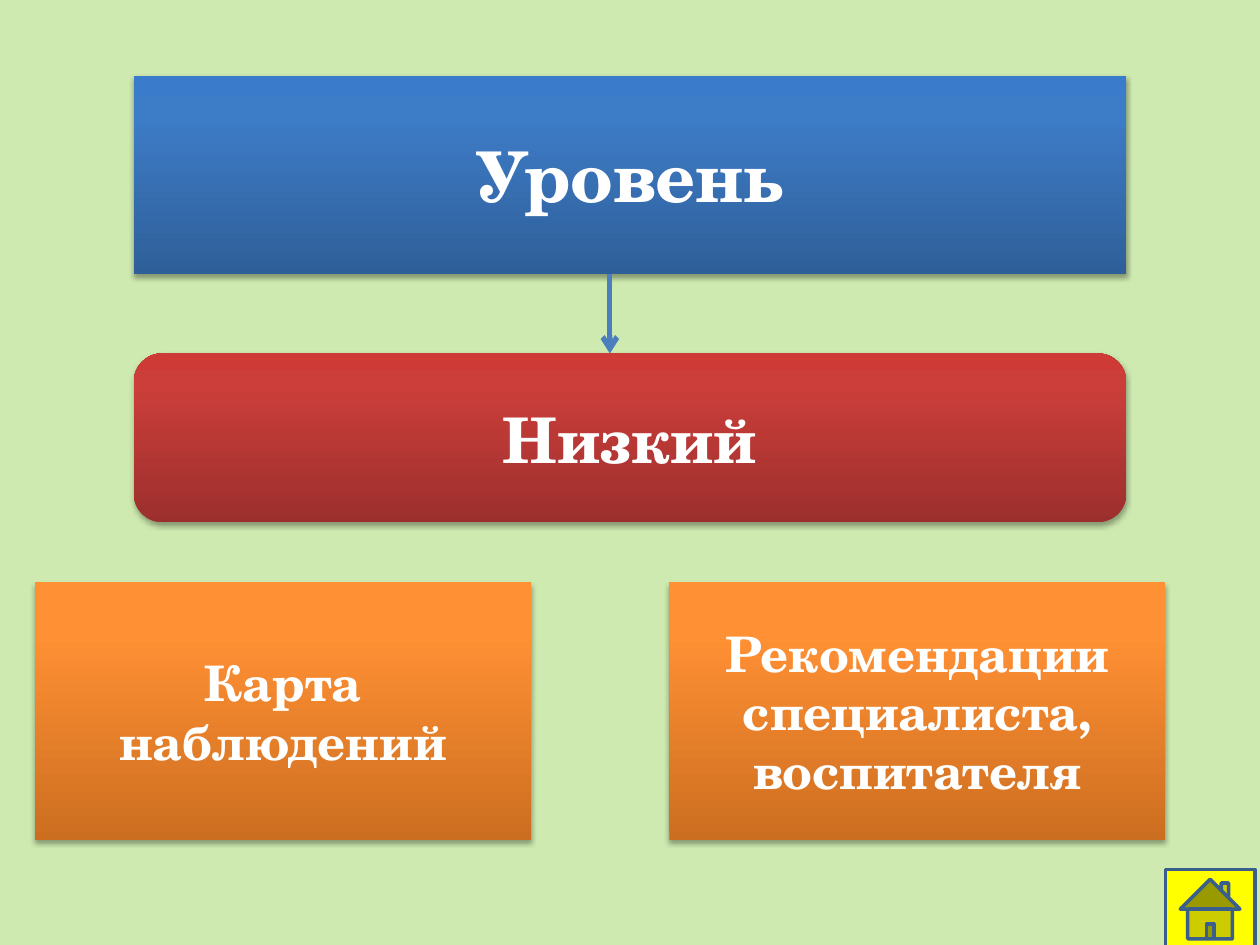
"""Build the level slide: a heading, its level and two follow-up cards."""
from lxml import etree
from pptx import Presentation
from pptx.dml.color import RGBColor
from pptx.enum import shapes, text
from pptx.oxml import ns
from pptx.util import Pt

FONT = "TeX Gyre Schola"
BLUE = ((0, "2F5F99"), (80, "3D7CC7"), (100, "3A7CCB"))
RED = ((0, "9C2F2D"), (80, "CB3E3A"), (100, "CE3B37"))
ORANGE = ((0, "CC6E20"), (80, "FF9034"), (100, "FF9136"))
RECT = shapes.MSO_SHAPE.RECTANGLE
ROUND = shapes.MSO_SHAPE.ROUNDED_RECTANGLE

WIDE_LEFT, WIDE_W = 76.5, 567
CARD_TOP, CARD_W, CARD_H = 332.75, 283.5, 147.5
HEAD_TOP, HEAD_H = 43.5, 113
LEVEL_TOP, LEVEL_H = 202, 96.5
ARROW_X = 348.5
BOXES = [
    ("Уровень", 40, RECT, BLUE, (WIDE_LEFT, HEAD_TOP, WIDE_W, HEAD_H)),
    ("Низкий", 36, ROUND, RED, (WIDE_LEFT, LEVEL_TOP, WIDE_W, LEVEL_H)),
    ("Карта наблюдений", 28, RECT, ORANGE, (20, CARD_TOP, CARD_W, CARD_H)),
    ("Рекомендации специалиста, воспитателя", 28, RECT, ORANGE,
     (382.5, CARD_TOP, CARD_W, CARD_H)),
]
HOME = (666, 496.8, 51, 45.4)


def rgb(value):
    return RGBColor.from_string(value)


def add(parent, tag, **attrs):
    return etree.SubElement(parent, ns.qn(tag), {k: str(v) for k, v in attrs.items()})


def set_gradient(s, stops):
    s.fill.gradient()
    s.fill.gradient_angle = 90
    stop_list = s._element.spPr.find(".//" + ns.qn("a:gsLst"))
    for old in list(stop_list):
        stop_list.remove(old)
    for pos, color in stops:
        add(add(stop_list, "a:gs", pos=pos * 1000), "a:srgbClr", val=color)


def set_shadow(s):
    s.shadow.inherit = False
    effects = s._element.spPr.find(ns.qn("a:effectLst"))
    shadow = add(effects, "a:outerShdw", blurRad=Pt(3.1), dist=Pt(1.8),
                 dir=5400000, rotWithShape=0)
    add(add(shadow, "a:srgbClr", val="000000"), "a:alpha", val=35000)


def add_box(slide, label, size, kind, stops, place):
    s = slide.shapes.add_shape(kind, *map(Pt, place))
    set_gradient(s, stops)
    s.line.fill.background()
    set_shadow(s)
    tf = s.text_frame
    tf.text = label
    tf.word_wrap = True
    tf.vertical_anchor = text.MSO_ANCHOR.MIDDLE
    p = tf.paragraphs[0]
    p.alignment = text.PP_ALIGN.CENTER
    font = p.runs[0].font
    font.name, font.size, font.bold = FONT, Pt(size), True
    font.color.rgb = rgb("FFFFFF")


def add_home(slide):
    s = slide.shapes.add_shape(shapes.MSO_SHAPE.ACTION_BUTTON_HOME, *map(Pt, HOME))
    s.shadow.inherit = False
    s.fill.solid()
    s.fill.fore_color.rgb = rgb("FFFF00")
    s.line.color.rgb = rgb("3A5F8C")
    s.line.width = Pt(2)


def add_arrow(slide):
    ends = (ARROW_X, HEAD_TOP + HEAD_H, ARROW_X, LEVEL_TOP)
    s = slide.shapes.add_connector(shapes.MSO_CONNECTOR.STRAIGHT, *map(Pt, ends))
    s.line.color.rgb = rgb("4B7EBC")
    s.line.width = Pt(3)
    add(s.line._get_or_add_ln(), "a:tailEnd", type="arrow")
    add(s._element.spPr, "a:effectLst")


def main():
    prs = Presentation()
    prs.slide_width, prs.slide_height = Pt(720), Pt(540)
    slide = prs.slides.add_slide(prs.slide_layouts[6])
    slide.background.fill.solid()
    slide.background.fill.fore_color.rgb = rgb("CEEAB0")
    for box in BOXES:
        add_box(slide, *box)
    add_home(slide)
    add_arrow(slide)
    prs.save("out.pptx")


if __name__ == "__main__":
    main()
